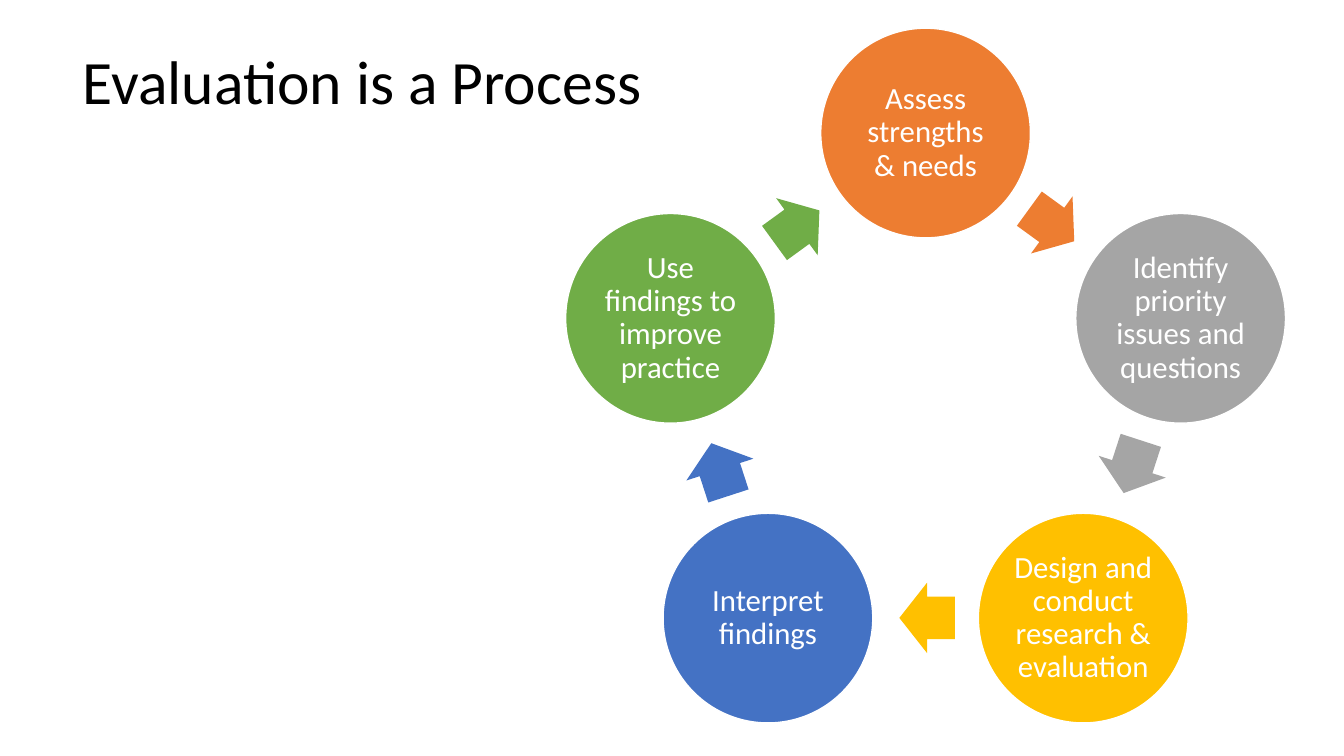
from dataclasses import dataclass
from math import cos, radians, sin

from pptx import Presentation
from pptx.dml.color import RGBColor
from pptx.enum.shapes import MSO_SHAPE
from pptx.enum.text import MSO_ANCHOR, PP_ALIGN
from pptx.shapes.autoshape import Shape
from pptx.slide import Slide
from pptx.text.text import TextFrame
from pptx.util import Inches, Pt

FONT = "Calibri"
MID_X, MID_Y = 9.18, 3.98
RING = 2.66  # radius through the circle centres
TRACK = 2.15  # radius through the arrow centres
LAG = 0.4  # degrees the arrows sit back from halfway
DISC = 2.08
ARROW_W, ARROW_H = 0.55, 0.7


@dataclass
class Step:
    text: str
    color: str


STEPS = [
    Step("Assess strengths & needs", "ED7D31"),
    Step("Identify priority issues and questions", "A5A5A5"),
    Step("Design and conduct research & evaluation", "FFC000"),
    Step("Interpret findings", "4472C4"),
    Step("Use findings to improve practice", "70AD47"),
]


def rgb(code: str) -> RGBColor:
    return RGBColor.from_string(code)


def write(frame: TextFrame, text: str, size: int, color: str, align: PP_ALIGN) -> None:
    frame.word_wrap = True
    para = frame.paragraphs[0]
    para.alignment = align
    para.line_spacing = 0.9
    run = para.add_run()
    run.text = text
    run.font.name = FONT
    run.font.size = Pt(size)
    run.font.color.rgb = rgb(color)


def place(slide: Slide, kind: MSO_SHAPE, angle: float, radius: float,
          width: float, height: float, color: str) -> Shape:
    """Centre a shape on the cycle, at degrees clockwise from the top."""
    x = MID_X + radius * sin(radians(angle))
    y = MID_Y - radius * cos(radians(angle))
    shape = slide.shapes.add_shape(
        kind, Inches(x - width / 2), Inches(y - height / 2),
        Inches(width), Inches(height))
    shape.shadow.inherit = False
    shape.fill.solid()
    shape.fill.fore_color.rgb = rgb(color)
    return shape


def add_disc(slide: Slide, step: Step, angle: float) -> None:
    disc = place(slide, MSO_SHAPE.OVAL, angle, RING, DISC, DISC, step.color)
    disc.line.color.rgb = rgb("FFFFFF")
    disc.line.width = Pt(1)
    frame = disc.text_frame
    frame.margin_left = frame.margin_right = Inches(0.03)
    frame.margin_top = frame.margin_bottom = Inches(0.03)
    frame.vertical_anchor = MSO_ANCHOR.MIDDLE
    write(frame, step.text, 22, "FFFFFF", PP_ALIGN.CENTER)


def add_arrow(slide: Slide, step: Step, angle: float) -> None:
    arrow = place(slide, MSO_SHAPE.RIGHT_ARROW, angle - LAG, TRACK,
                  ARROW_W, ARROW_H, step.color)
    arrow.line.fill.background()
    arrow.adjustments[0] = 0.6
    arrow.adjustments[1] = 0.5
    arrow.rotation = angle


def main() -> None:
    deck = Presentation()
    deck.slide_width, deck.slide_height = Inches(13.33), Inches(7.5)
    slide = deck.slides.add_slide(deck.slide_layouts[6])

    title = slide.shapes.add_textbox(
        Inches(0.72), Inches(0.46), Inches(5.85), Inches(1.61))
    write(title.text_frame, "Evaluation is a Process", 44, "000000", PP_ALIGN.LEFT)

    turn = 360 / len(STEPS)
    for i, step in enumerate(STEPS):
        add_disc(slide, step, i * turn)
        add_arrow(slide, step, (i + 0.5) * turn)

    deck.save("out.pptx")


if __name__ == "__main__":
    main()
